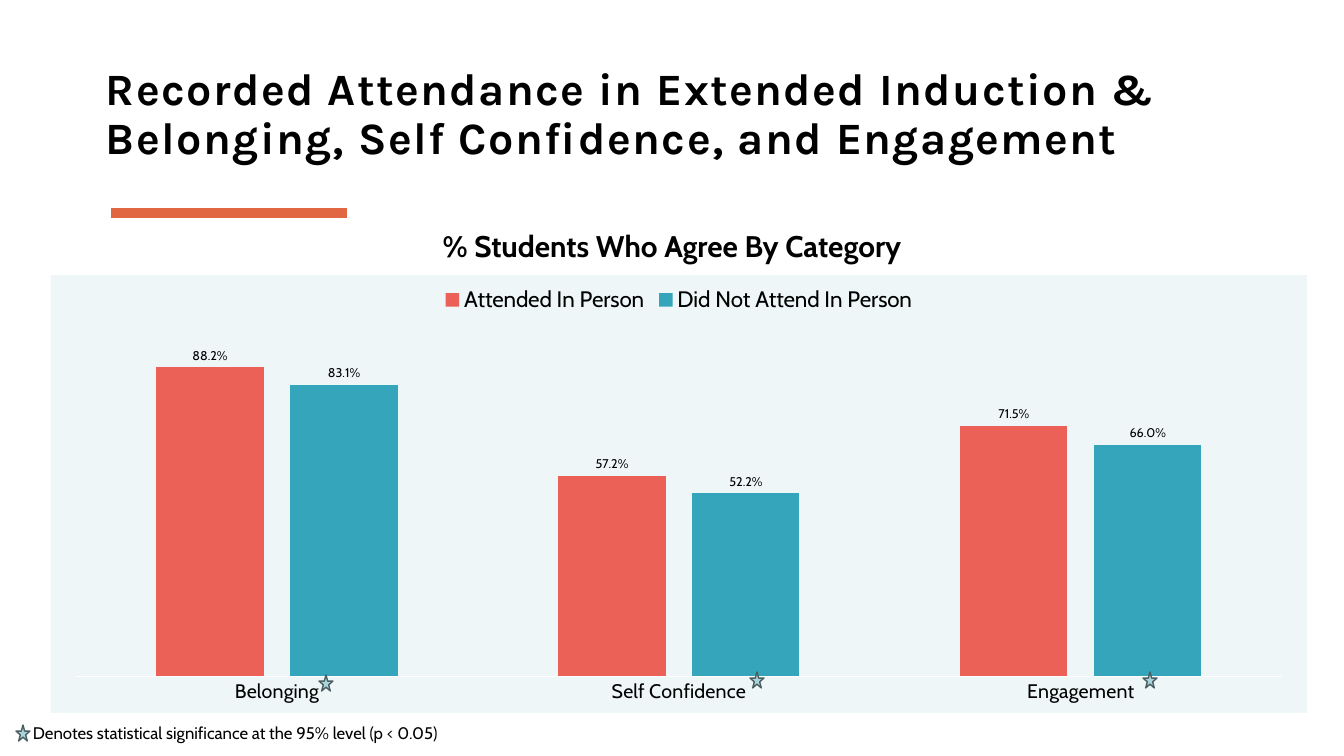
"""Build the slide on induction attendance and student agreement."""
from pptx import Presentation, util as u
from pptx.chart.data import CategoryChartData
from pptx.dml.color import RGBColor
from pptx.enum import chart as ec, shapes, text
from pptx.oxml import parse_xml

theme = dict(
    head="Karla", body="Cabin",
    ink="000000", white="FFFFFF", bar="E06742", panel="EEF6F8",
    star="A9D4DB", edge="4A5D60", series=("EB6057", "35A5BC"),
    title=32, sub=21.3, legend=16, axis=14, note=12, label=9,
)
A = "http://schemas.openxmlformats.org/drawingml/2006/main"
C = "http://schemas.openxmlformats.org/drawingml/2006/chart"


def px(*nums):
    """Turn pixels into EMU."""
    return [u.Emu(round(n * 914400 / 100.8)) for n in nums]


def style(font, size, face="body", bold=False):
    """Set face, size, weight and ink colour."""
    font.name, font.size, font.bold = theme[face], u.Pt(theme[size]), bold
    font.color.rgb = RGBColor.from_string(theme["ink"])


deck = Presentation()
deck.slide_width, deck.slide_height = px(1344, 756)
slide = deck.slides.add_slide(deck.slide_layouts[5])

title = slide.shapes.title
title.left, title.top, title.width, title.height = px(106, 97, 1200, 67)
frame = title.text_frame
frame.text = ("Recorded Attendance in Extended Induction &\v"
              "Belonging, Self Confidence, and Engagement")
frame.margin_left = frame.margin_right = frame.margin_top = frame.margin_bottom = 0
frame.vertical_anchor = text.MSO_ANCHOR.BOTTOM
frame.auto_size = text.MSO_AUTO_SIZE.NONE
frame.word_wrap = True
para = frame.paragraphs[0]
para.alignment, para.line_spacing = text.PP_ALIGN.LEFT, 0.9
style(para.font, "title", "head", True)
for run in para.runs:
    run._r.get_or_add_rPr().set("spc", "100")

data = CategoryChartData(number_format="0.0%")
data.categories = ["Belonging", "Self Confidence", "Engagement"]
data.add_series("Attended In Person", (0.882, 0.572, 0.715))
data.add_series("Did Not Attend In Person", (0.831, 0.522, 0.66))
chart = slide.shapes.add_chart(
    ec.XL_CHART_TYPE.COLUMN_CLUSTERED, *px(51, 275, 1256, 438), data).chart
chart.has_title = False
style(chart.font, "axis")
chart.has_legend = True
chart.legend.position = ec.XL_LEGEND_POSITION.TOP
chart.legend.include_in_layout = False
style(chart.legend.font, "legend")

cats, vals = chart.category_axis, chart.value_axis
cats.major_tick_mark = ec.XL_TICK_MARK.NONE
cats.format.line.color.rgb = RGBColor.from_string(theme["white"])
cats.format.line.width = u.Pt(0.75)
style(cats.tick_labels.font, "axis")
vals.minimum_scale, vals.maximum_scale = 0, 1
vals.has_major_gridlines = vals.visible = False
vals.tick_labels.number_format = "0.0%"
vals.tick_labels.number_format_is_linked = False

plot = chart.plots[0]
plot.gap_width, plot.overlap, plot.vary_by_categories = 150, -25, False
for series, color in zip(plot.series, theme["series"]):
    series.format.fill.solid()
    series.format.fill.fore_color.rgb = RGBColor.from_string(color)
    labels = series.data_labels
    labels.show_value = True
    labels.number_format, labels.number_format_is_linked = "0.0%", False
    labels.position = ec.XL_LABEL_POSITION.OUTSIDE_END
    style(labels.font, "label")

area = chart._chartSpace.chart.plotArea
for old in area.findall(f"{{{C}}}layout"):
    area.remove(old)
spots = dict(x=0.02, y=0.116, w=0.96, h=0.8)
area.insert(0, parse_xml(
    f'<c:layout xmlns:c="{C}"><c:manualLayout><c:layoutTarget val="inner"/>'
    '<c:xMode val="edge"/><c:yMode val="edge"/>'
    + "".join(f'<c:{key} val="{val}"/>' for key, val in spots.items())
    + "</c:manualLayout></c:layout>"))
chart._chartSpace.chart.addnext(parse_xml(
    f'<c:spPr xmlns:c="{C}" xmlns:a="{A}"><a:solidFill>'
    f'<a:srgbClr val="{theme["panel"]}"/></a:solidFill>'
    "<a:ln><a:noFill/></a:ln></c:spPr>"))

rect, star = shapes.MSO_SHAPE.RECTANGLE, shapes.MSO_SHAPE.STAR_5_POINT
marks = [(rect, (110, 207, 238, 12), "bar", "white")]
for left, top in ((319, 675), (750, 672), (1143, 672), (16, 725)):
    marks.append((star, (left, top, 14, 16), "star", "edge"))
for kind, box, fill, line in marks:
    mark = slide.shapes.add_shape(kind, *px(*box))
    mark.shadow.inherit = False
    mark.fill.solid()
    mark.fill.fore_color.rgb = RGBColor.from_string(theme[fill])
    mark.line.color.rgb = RGBColor.from_string(theme[line])
    mark.line.width = u.Pt(1)

for words, box, size, bold, align in (
    ("% Students Who Agree By Category", (336, 223, 672, 46), "sub", True,
     text.PP_ALIGN.CENTER),
    ("Denotes statistical significance at the 95% level (p < 0.05)",
     (23, 718, 759, 30), "note", False, text.PP_ALIGN.LEFT),
):
    frame = slide.shapes.add_textbox(*px(*box)).text_frame
    frame.word_wrap = True
    frame.auto_size = text.MSO_AUTO_SIZE.SHAPE_TO_FIT_TEXT
    para = frame.paragraphs[0]
    para.text, para.alignment = words, align
    style(para.font, size, bold=bold)

deck.save("out.pptx")
